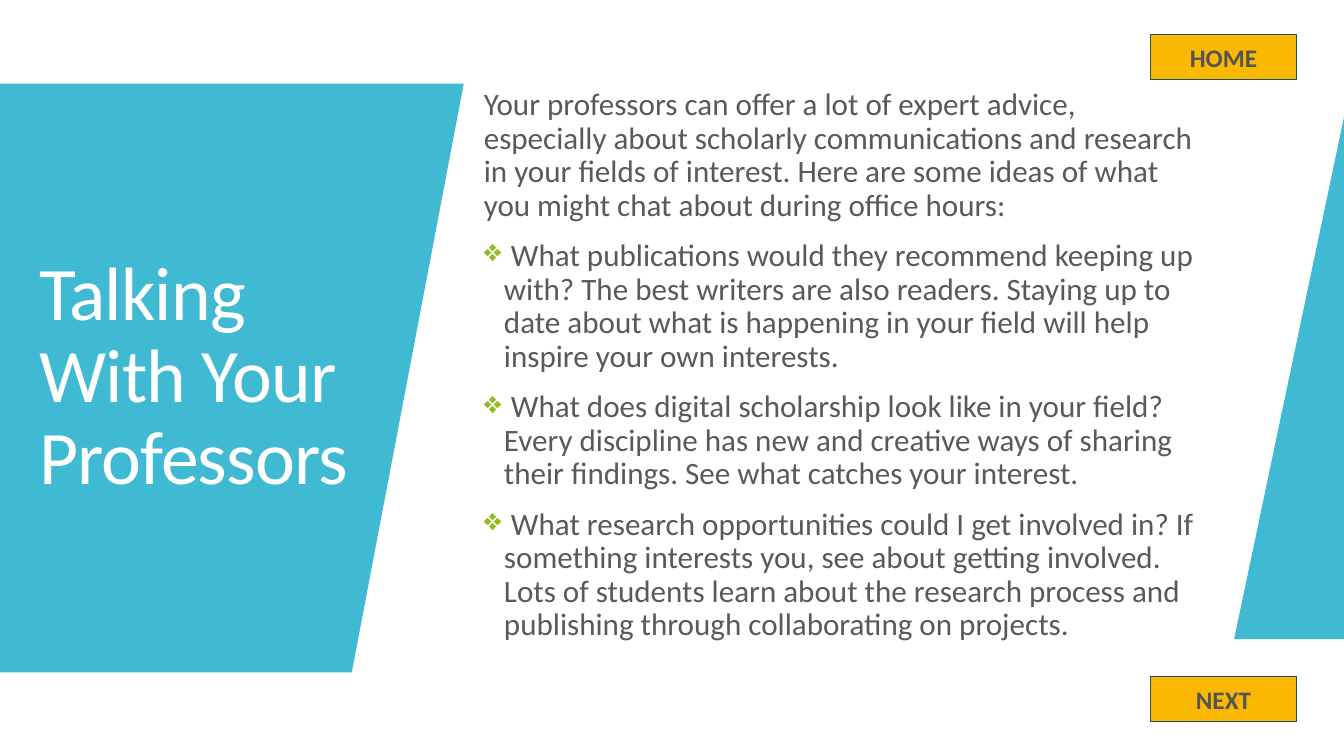
"""Build the slide about talking with your professors."""
from lxml.etree import SubElement
from pptx import Presentation
from pptx.dml.color import RGBColor
from pptx.enum.shapes import MSO_SHAPE
from pptx.enum.text import MSO_ANCHOR, PP_ALIGN
from pptx.oxml.ns import qn
from pptx.util import Pt

PX = 9144
THEME = {
    "teal": RGBColor.from_string("40BAD2"),
    "gold": RGBColor.from_string("FAB900"),
    "outline": RGBColor.from_string("1C525C"),
    "bullet": "90BB23",
    "title": {"name": "Calibri", "size": Pt(54), "color": "FFFFFF"},
    "body": {"name": "Calibri", "size": Pt(22.2), "color": "595959"},
    "button": {"name": "Calibri", "size": Pt(18), "color": "545454", "bold": True},
}
PANELS = [
    [(349, 667), (0, 667), (0, 83), (460, 83)],
    [(1333, 634), (1224, 634), (1333, 116)],
]
INTRO = (
    "Your professors can offer a lot of expert advice, especially about scholarly "
    "communications and research in your fields of interest. Here are some ideas of "
    "what you might chat about during office hours:"
)
QUESTIONS = [
    " What publications would they recommend keeping up with? The best writers are also "
    "readers. Staying up to date about what is happening in your field will help inspire "
    "your own interests.",
    " What does digital scholarship look like in your field? Every discipline has new and "
    "creative ways of sharing their findings. See what catches your interest.",
    " What research opportunities could I get involved in? If something interests you, see "
    "about getting involved. Lots of students learn about the research process and "
    "publishing through collaborating on projects.",
]
BUTTONS = [("HOME", 34), ("NEXT", 671)]


def write(para, text, style, **layout):
    """Add one styled run to a paragraph and return it."""
    for key, value in layout.items():
        setattr(para, key, value)
    span = para.add_run()
    span.text = text
    for key, value in THEME[style].items():
        if key == "color":
            span.font.color.rgb = RGBColor.from_string(value)
        else:
            setattr(span.font, key, value)
    return span


def add_text_box(page, left, top, width, height, anchor):
    """Add a wrapping text box and return its frame."""
    box = page.shapes.add_textbox(left * PX, top * PX, width * PX, height * PX)
    box.text_frame.word_wrap = True
    box.text_frame.vertical_anchor = anchor
    return box.text_frame


deck = Presentation()
deck.slide_width, deck.slide_height = 1333 * PX, 750 * PX
page = deck.slides.add_slide(deck.slide_layouts[6])

for corners in PANELS:
    builder = page.shapes.build_freeform(*corners[0], scale=PX)
    builder.add_line_segments(corners[1:], close=True)
    panel = builder.convert_to_shape()
    panel.shadow.inherit = False
    panel.fill.solid()
    panel.fill.fore_color.rgb = THEME["teal"]
    panel.line.fill.background()

title = add_text_box(page, 29, 184, 345, 382, MSO_ANCHOR.MIDDLE)
heading = write(title.paragraphs[0], "Talking With Your Professors", "title", line_spacing=0.9)
heading.font._element.set("spc", "-60")

body = add_text_box(page, 470, 83, 725, 583, MSO_ANCHOR.TOP)
write(body.paragraphs[0], INTRO, "body", line_spacing=0.9)
for question in QUESTIONS:
    para = body.add_paragraph()
    properties = para._p.get_or_add_pPr()
    properties.set("marL", str(20 * PX))
    properties.set("indent", str(-20 * PX))
    bullet_color = SubElement(properties, qn("a:buClr"))
    SubElement(bullet_color, qn("a:srgbClr"), val=THEME["bullet"])
    SubElement(properties, qn("a:buChar"), char="❖")
    write(para, question, "body", line_spacing=0.9, space_before=Pt(12))

for label, top in BUTTONS:
    button = page.shapes.add_shape(MSO_SHAPE.RECTANGLE, 1141 * PX, top * PX, 145 * PX, 45 * PX)
    button.shadow.inherit = False
    button.fill.solid()
    button.fill.fore_color.rgb = THEME["gold"]
    button.line.color.rgb = THEME["outline"]
    button.line.width = Pt(0.85)
    button.text_frame.vertical_anchor = MSO_ANCHOR.MIDDLE
    write(button.text_frame.paragraphs[0], label, "button", alignment=PP_ALIGN.CENTER)

deck.save("out.pptx")
